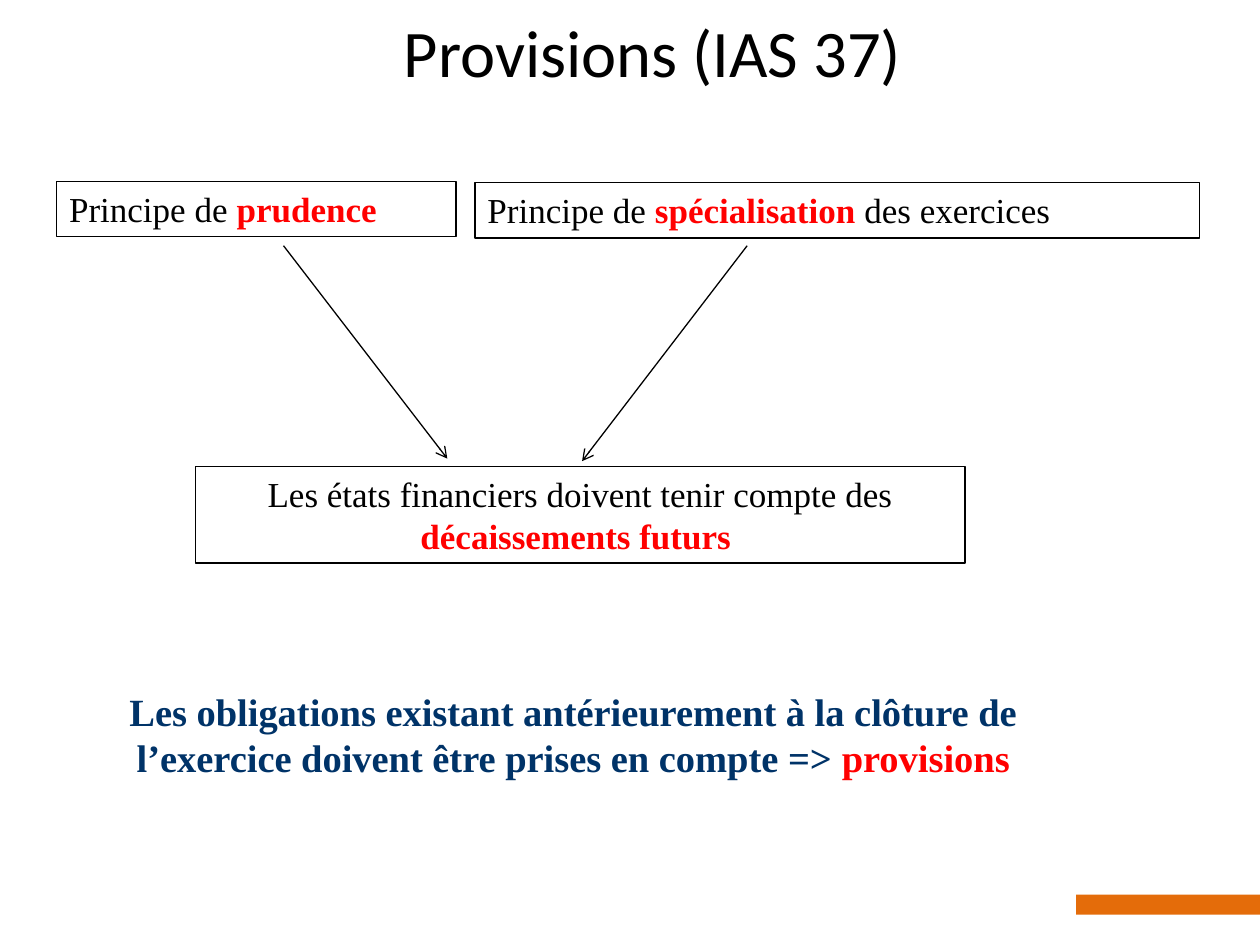
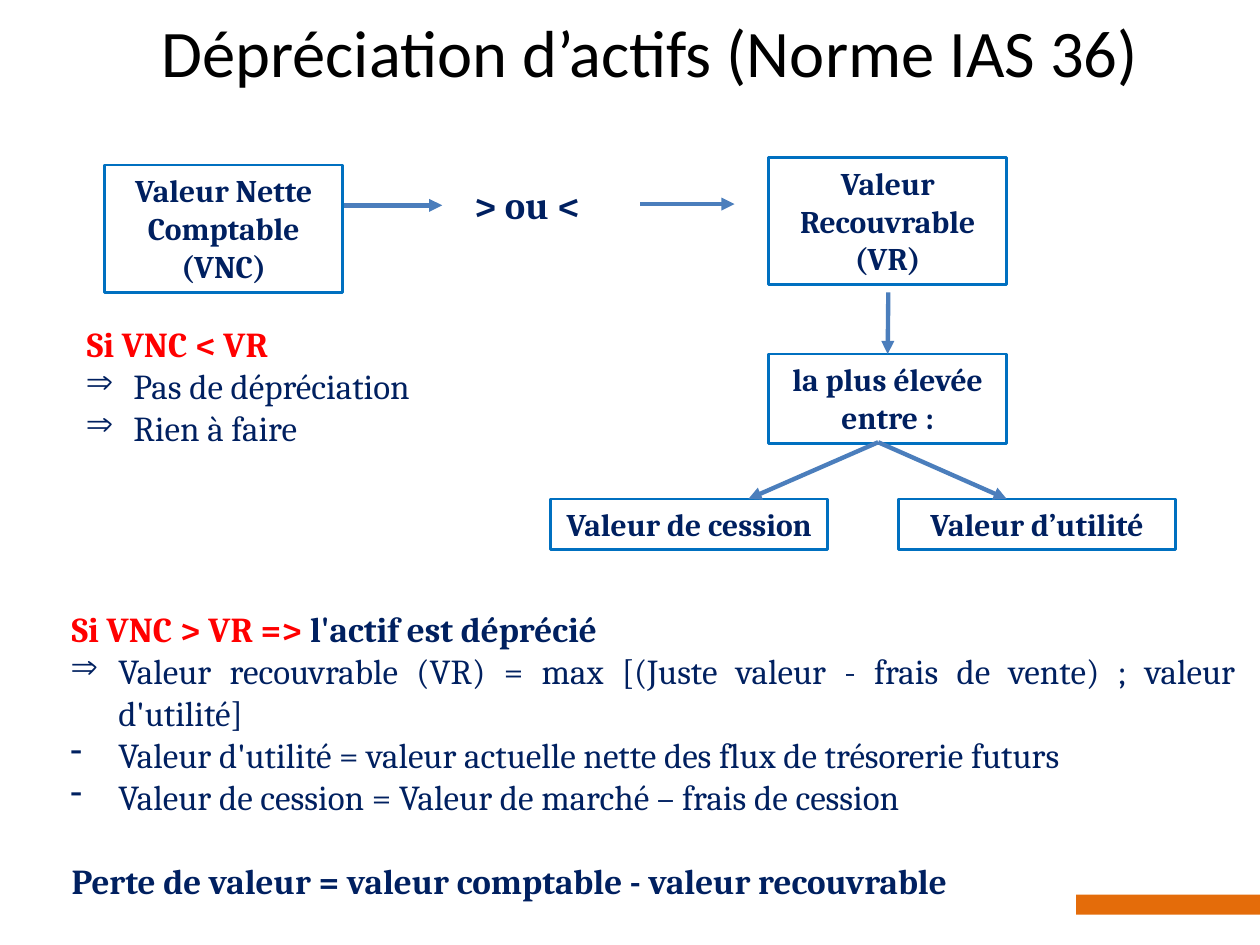
"""Build two slides on provisions (IAS 37) and asset impairment (IAS 36)."""
from dataclasses import dataclass

from lxml import etree
from pptx import Presentation
from pptx.dml.color import RGBColor
from pptx.enum import shapes, text
from pptx.oxml import ns
from pptx.util import Inches, Pt


@dataclass(frozen=True)
class Theme:
    """Colours, fonts and type sizes of the deck."""
    black: str = "000000"
    red: str = "FF0000"
    blue: str = "003368"
    navy: str = "002060"
    frame: str = "0070C0"
    arrow: str = "4B7EBC"
    band: str = "E46C0A"
    title_font: str = "Calibri"
    provision_font: str = "Times New Roman"
    impairment_font: str = "Cambria"
    title: int = 38
    statement: int = 22
    body: int = 20
    label: int = 18


T = Theme()
LEFT, CENTER, JUSTIFY = text.PP_ALIGN.LEFT, text.PP_ALIGN.CENTER, text.PP_ALIGN.JUSTIFY
BAND = (8.54, 7.1, 1.46, 0.16)
TITLE_TOP, TITLE_SIZE = 0, (8.98, 1.06)

PROVISIONS_TITLE = ("Provisions (IAS 37)", 0.69)
PRINCIPLES = [
    ((0.45, 1.44, 3.17, 0.44), LEFT,
     [("Principe de ", T.black, False), ("prudence", T.red, True)]),
    ((3.77, 1.45, 5.75, 0.44), LEFT,
     [("Principe de ", T.black, False), ("spécialisation", T.red, True),
      (" des exercices", T.black, False)]),
    ((1.55, 3.7, 6.11, 0.77), CENTER,
     [("Les états financiers doivent tenir compte des ", T.black, False),
      ("décaissements futurs ", T.red, True)]),
]
PRINCIPLE_ARROWS = [((2.25, 1.95), (3.55, 3.64)), ((5.93, 1.95), (4.62, 3.66))]
CONCLUSION_AT = (0.6, 5.41, 7.9, 0.84)
CONCLUSION = [
    ("Les obligations existant antérieurement à la clôture de l’exercice "
     "doivent être prises en compte => ", T.blue, True),
    ("provisions", T.red, True),
]

IMPAIRMENT_TITLE = ("Dépréciation d’actifs (Norme IAS 36)", 0.67)
VALUES = {
    "Valeur Nette Comptable (VNC)": (0.83, 1.31, 1.89, 1.01),
    "Valeur Recouvrable (VR)": (6.1, 1.25, 1.89, 1.01),
    "la plus élevée entre :": (6.1, 2.81, 1.89, 0.71),
    "Valeur de cession": (4.37, 3.96, 2.2, 0.4),
    "Valeur d’utilité": (7.13, 3.96, 2.2, 0.4),
}
COMPARISON_AT = (3.27, 1.39, 1.89, 0.47)
COMPARISON = [("> ou < ", T.navy, True)]
FORK = (6.97, 3.51)
VALUE_ARROWS = [
    ((2.73, 1.63), (3.51, 1.63), None),
    ((5.08, 1.62), (5.83, 1.62), None),
    ((7.05, 2.32), (7.05, 2.81), "la plus élevée entre :"),
    (FORK, (5.94, 3.96), None),
    (FORK, (7.99, 3.96), None),
]
CASES = [
    ((0.4, 4.77, 9.51, 2.02), [
        ("", 0, [("Si VNC > VR => ", T.red, True), ("l'actif est déprécié", T.navy, True)]),
        ("⇒", 0, [("Valeur recouvrable (VR) = max [(Juste valeur - frais de vente) ; "
                   "valeur d'utilité]", T.navy, False)]),
        ("-", 0, [("Valeur d'utilité = valeur actuelle nette des flux de trésorerie futurs",
                   T.navy, False)]),
        ("-", 0, [("Valeur de cession = Valeur de marché – frais de cession", T.navy, False)]),
        ("", 24, [("Perte de valeur = valeur comptable - valeur recouvrable", T.navy, True)]),
    ]),
    ((0.52, 2.51, 2.91, 1.06), [
        ("", 0, [("Si VNC < VR", T.red, True)]),
        ("⇒", 0, [("Pas de dépréciation", T.navy, False)]),
        ("⇒", 0, [("Rien à faire", T.navy, False)]),
    ]),
]


def inches(values):
    return [Inches(value) for value in values]


def style(font, color, bold):
    font.color.rgb = RGBColor.from_string(color)
    font.bold = bold


def write(paragraph, pieces, face, size, align):
    paragraph.alignment = align
    paragraph.font.name, paragraph.font.size = face, Pt(size)
    uniform = len({piece[1:] for piece in pieces}) == 1
    if uniform:
        style(paragraph.font, *pieces[0][1:])
    for words, color, bold in pieces:
        run = paragraph.add_run()
        run.text = words
        if not uniform:
            style(run.font, color, bold)


def prepare(frame, grow=True):
    frame.word_wrap = True
    frame.vertical_anchor = text.MSO_ANCHOR.TOP
    frame.auto_size = (text.MSO_AUTO_SIZE.SHAPE_TO_FIT_TEXT if grow
                       else text.MSO_AUTO_SIZE.NONE)
    return frame


def add_box(slide, at, pieces, face, size, align, line, weight):
    box = slide.shapes.add_shape(shapes.MSO_SHAPE.RECTANGLE, *inches(at))
    box.shadow.inherit = False
    box.fill.background()
    box.line.color.rgb = RGBColor.from_string(line)
    box.line.width = Pt(weight)
    write(prepare(box.text_frame).paragraphs[0], pieces, face, size, align)
    return box


def add_statement(slide, at, pieces, face):
    frame = prepare(slide.shapes.add_textbox(*inches(at)).text_frame)
    write(frame.paragraphs[0], pieces, face, T.statement, CENTER)


def add_arrow(slide, start, end, color, weight, head):
    arrow = slide.shapes.add_connector(shapes.MSO_CONNECTOR.STRAIGHT, *inches(start + end))
    arrow.line.color.rgb = RGBColor.from_string(color)
    arrow.line.width = Pt(weight)
    etree.SubElement(arrow.line._get_or_add_ln(), ns.qn("a:tailEnd"), type=head)
    etree.SubElement(arrow.element.spPr, ns.qn("a:effectLst"))
    return arrow


def add_case(slide, at, lines):
    frame = prepare(slide.shapes.add_textbox(*inches(at)).text_frame, grow=False)
    for number, (bullet, gap, pieces) in enumerate(lines):
        paragraph = frame.add_paragraph() if number else frame.paragraphs[0]
        properties = paragraph._p.get_or_add_pPr()
        properties.set("marL", str(Inches(0.44 if bullet else 0.07)))
        properties.set("indent", str(Inches(-0.38 if bullet else 0)))
        if bullet:
            etree.SubElement(properties, ns.qn("a:buChar"), char=bullet)
        if gap:
            paragraph.space_before = Pt(gap)
        write(paragraph, pieces, T.impairment_font, T.body, JUSTIFY)


def add_slide(deck, layout, heading, left):
    slide = deck.slides.add_slide(layout)
    title = slide.shapes.title
    title.left, title.top = inches((left, TITLE_TOP))
    title.width, title.height = inches(TITLE_SIZE)
    frame = prepare(title.text_frame, grow=False)
    frame.margin_top = Inches(0.09)
    write(frame.paragraphs[0], [(heading, T.black, False)], T.title_font, T.title, CENTER)
    return slide


def add_layout_band(slide, layout):
    band = slide.shapes.add_shape(shapes.MSO_SHAPE.RECTANGLE, *inches(BAND))
    band.shadow.inherit = False
    band.fill.solid()
    band.fill.fore_color.rgb = RGBColor.from_string(T.band)
    band.line.fill.background()
    layout.placeholders[0].element.addprevious(band.element)


def build_provisions(deck, layout):
    slide = add_slide(deck, layout, *PROVISIONS_TITLE)
    add_layout_band(slide, layout)
    for at, align, pieces in PRINCIPLES:
        add_box(slide, at, pieces, T.provision_font, T.body, align, T.black, 0.75)
    for start, end in PRINCIPLE_ARROWS:
        add_arrow(slide, start, end, T.black, 0.75, "arrow")
    add_statement(slide, CONCLUSION_AT, CONCLUSION, T.provision_font)


def build_impairment(deck, layout):
    slide = add_slide(deck, layout, *IMPAIRMENT_TITLE)
    values = {label: add_box(slide, at, [(label, T.navy, True)], T.impairment_font,
                             T.label, CENTER, T.frame, 1.5)
              for label, at in VALUES.items()}
    add_statement(slide, COMPARISON_AT, COMPARISON, T.impairment_font)
    for start, end, target in VALUE_ARROWS:
        arrow = add_arrow(slide, start, end, T.arrow, 2.5, "triangle")
        if target:
            arrow.end_connect(values[target], 0)
    for at, lines in CASES:
        add_case(slide, at, lines)


def main():
    deck = Presentation()
    deck.slide_width, deck.slide_height = inches((10, 7.5))
    layout = deck.slide_layouts.get_by_name("Title Only")
    build_provisions(deck, layout)
    build_impairment(deck, layout)
    deck.save("out.pptx")


if __name__ == "__main__":
    main()
